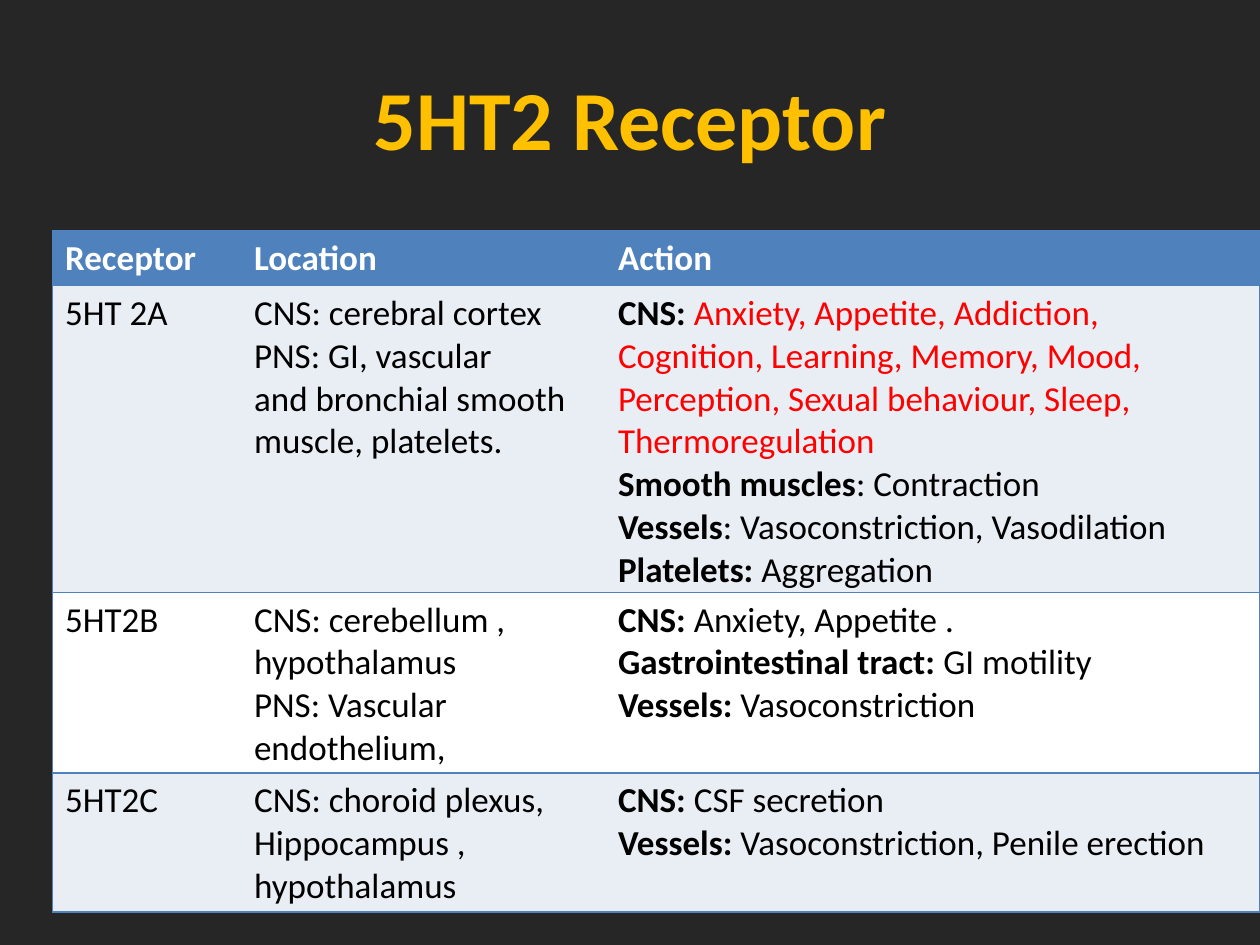
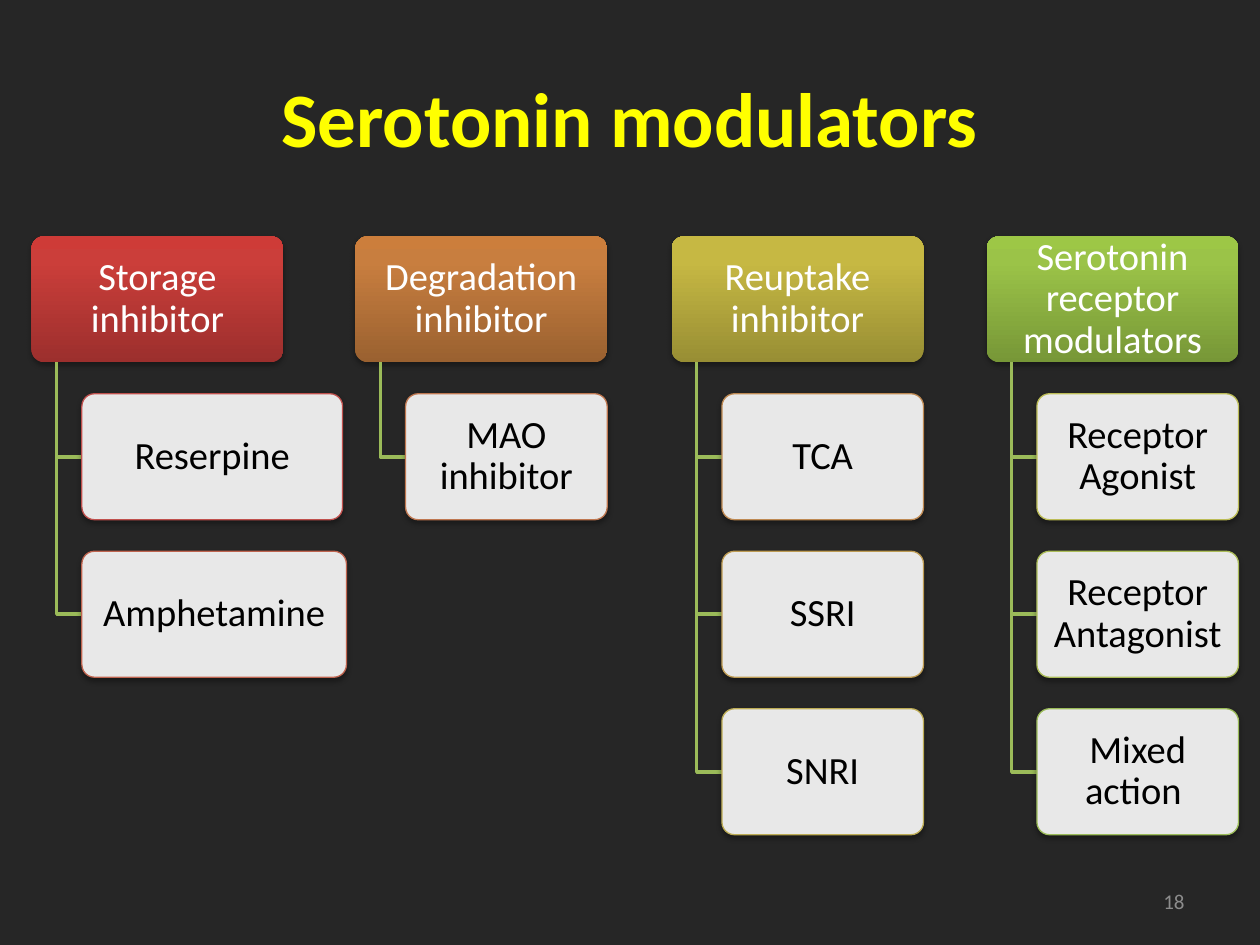
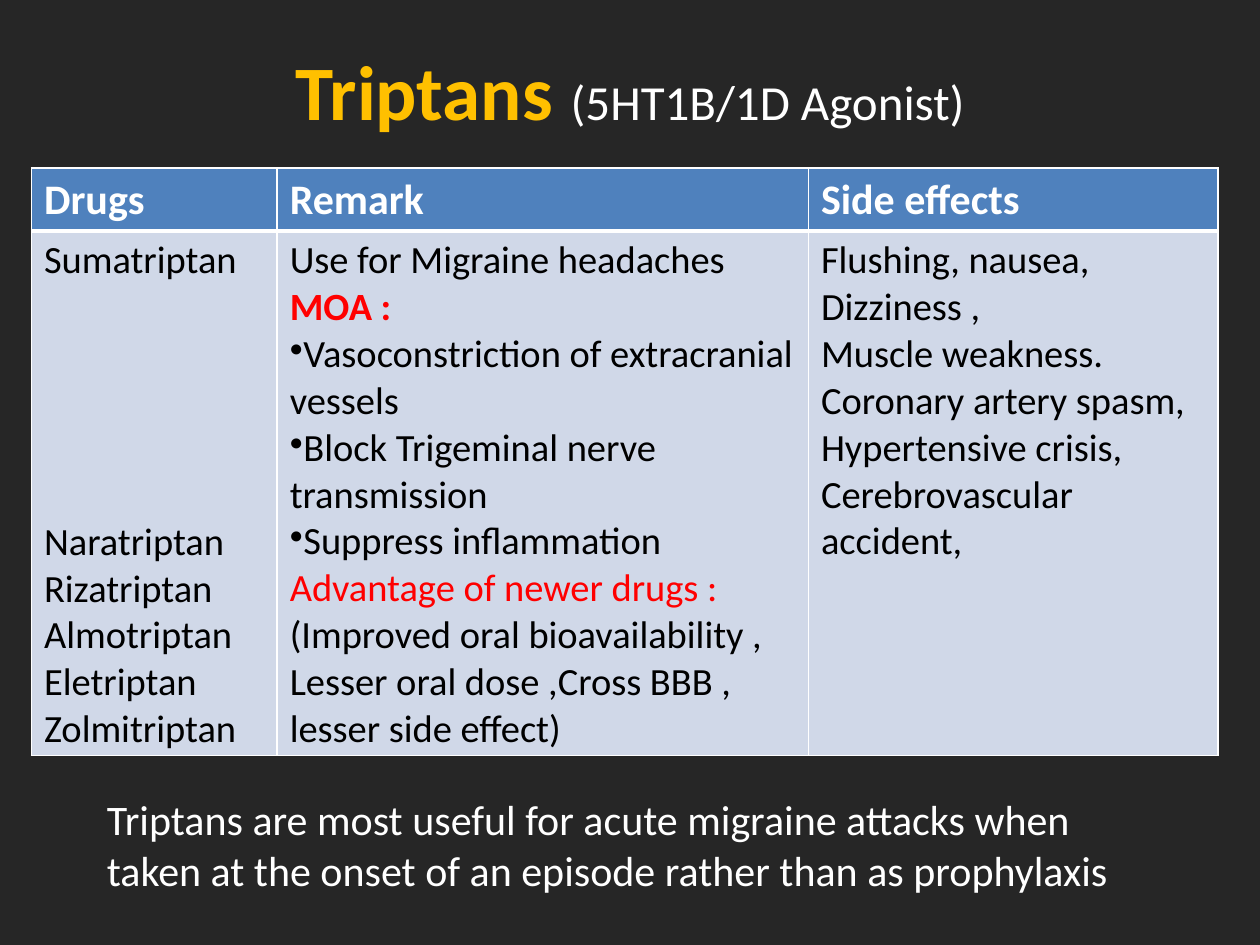
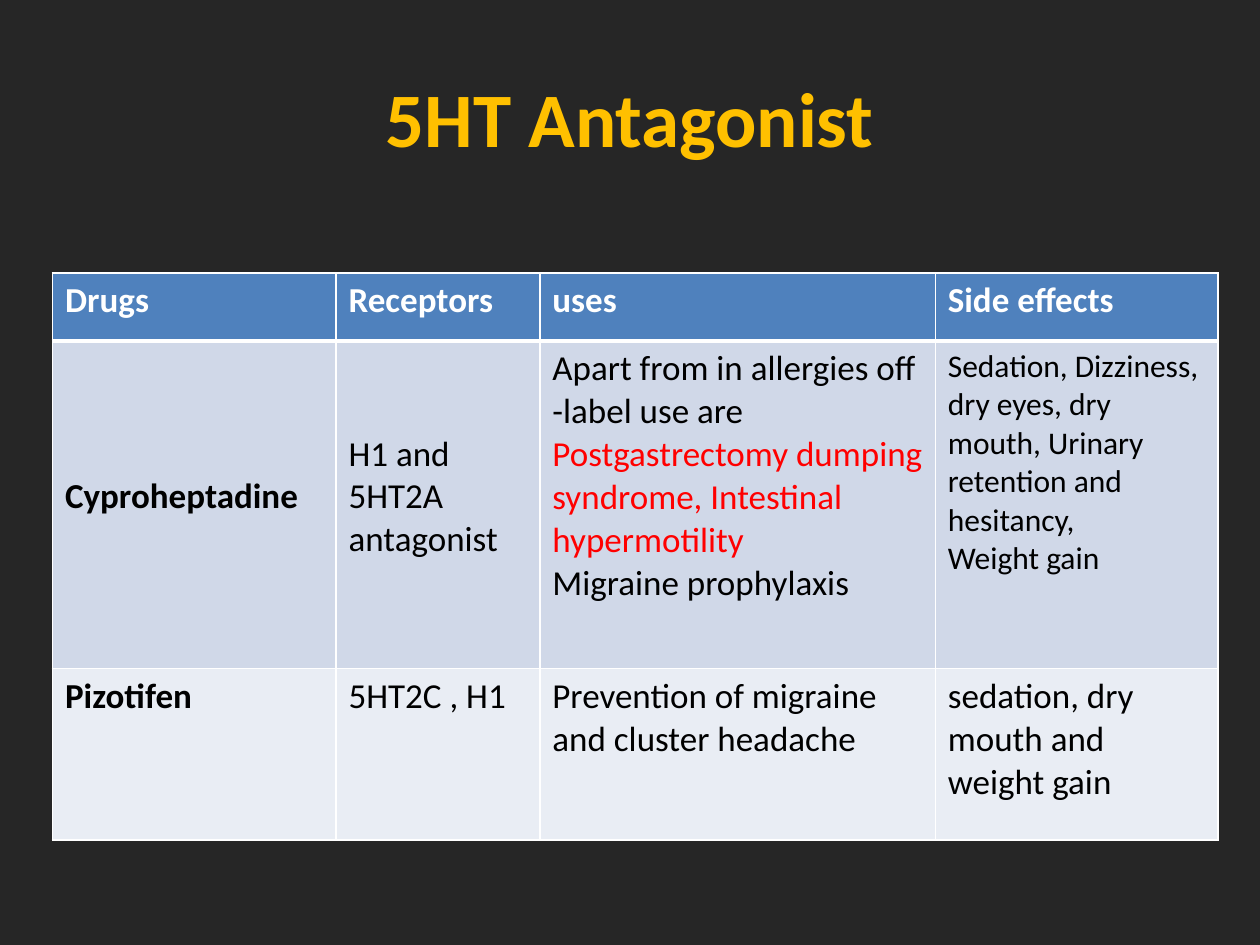
from dataclasses import dataclass
from typing import Optional

from lxml.etree import SubElement
from pptx import Presentation
from pptx.dml.color import RGBColor
from pptx.enum.shapes import MSO_SHAPE as Preset
from pptx.enum.text import MSO_ANCHOR as Anchor, PP_ALIGN as Align
from pptx.oxml.ns import qn
from pptx.util import Pt


@dataclass(frozen=True)
class Theme:
    font: str = "Calibri"
    background: str = "262626"
    gold: str = "FFC000"
    yellow: str = "FFFF00"
    white: str = "FFFFFF"
    black: str = "000000"
    red: str = "FF0000"
    grey: str = "8C8C8C"
    blue: str = "4F81BD"
    band: str = "D0D8E8"
    pale: str = "E9EDF4"
    branch: str = "9BBB59"
    title: float = 44
    large_title: float = 48
    subtitle: float = 28
    note: float = 24
    node: float = 22
    cell: float = 20
    small: float = 18
    number: float = 12


THEME = Theme()


@dataclass(frozen=True)
class Span:
    text: str
    color: str = THEME.black
    bold: bool = False
    size: Optional[float] = None


@dataclass(frozen=True)
class Line:
    spans: tuple[Span, ...]
    bullet: bool = False
    before: float = 0


@dataclass(frozen=True)
class Cell:
    lines: tuple[Line, ...]
    top: float = 3.6


@dataclass(frozen=True)
class Area:
    left: float
    top: float
    width: float
    height: float

    def lengths(self) -> tuple:
        return Pt(self.left), Pt(self.top), Pt(self.width), Pt(self.height)


@dataclass(frozen=True)
class Grid:
    """A table; body rows grow to fit their text, up to the area's height."""
    area: Area
    columns: tuple[float, ...]
    rows: tuple[float, ...]
    headings: tuple[str, ...]
    body: tuple[tuple[Cell, ...], ...]
    fills: tuple[str, ...]
    rule: str = THEME.white
    inner_verticals: bool = True
    header_rule: float = 3
    heading_size: float = THEME.cell
    size: float = THEME.cell


@dataclass(frozen=True)
class Leaf:
    text: str
    border: str
    width: float = 115.2


@dataclass(frozen=True)
class Branch:
    left: float
    heading: str
    shades: tuple[str, str, str]
    leaves: tuple[Leaf, ...]


def line(text: str, color: str = THEME.black, bold: bool = False, size: Optional[float] = None,
         bullet: bool = False, before: float = 0) -> Line:
    return Line((Span(text, color, bold, size),), bullet, before)


def labelled(label: str, text: str, color: str = THEME.black) -> Line:
    return Line((Span(label, bold=True), Span(text, color)))


def plain(*texts: str, size: Optional[float] = None, bold: bool = False, top: float = 3.6) -> Cell:
    return Cell(tuple(line(text, bold=bold, size=size) for text in texts), top)


def rgb(color: str) -> RGBColor:
    return RGBColor.from_string(color)


def write(frame, lines: tuple[Line, ...], size: float, align: Align = Align.LEFT,
          spacing: Optional[float] = None) -> None:
    frame.word_wrap = True
    for index, entry in enumerate(lines):
        para = frame.add_paragraph() if index else frame.paragraphs[0]
        para.alignment = align
        if spacing:
            para.line_spacing = spacing
        if entry.before:
            para.space_before = Pt(entry.before)
        if entry.bullet:
            SubElement(para._p.get_or_add_pPr(), qn("a:buChar"), char="•")
        for span in entry.spans:
            run = para.add_run()
            run.text = span.text
            run.font.name = THEME.font
            run.font.size = Pt(span.size or size)
            run.font.bold = span.bold
            run.font.color.rgb = rgb(span.color)


def add_text(page, area: Area, lines: tuple[Line, ...], size: float,
             align: Align = Align.LEFT, anchor: Anchor = Anchor.MIDDLE) -> None:
    box = page.shapes.add_textbox(*area.lengths())
    box.text_frame.vertical_anchor = anchor
    write(box.text_frame, lines, size, align)


def add_page(deck, *title: Span, top: float = 21.6):
    page = deck.slides.add_slide(deck.slide_layouts[6])
    page.background.fill.solid()
    page.background.fill.fore_color.rgb = rgb(THEME.background)
    add_text(page, Area(36, top, 648, 90), (Line(title),), THEME.title, Align.CENTER)
    return page


def set_borders(cell, color: str, widths: dict[str, float]) -> None:
    """Draw the cell's edges (L, R, T, B); a width of zero hides the edge."""
    properties = cell._tc.get_or_add_tcPr()
    for index, side in enumerate("LRTB"):
        edge = SubElement(properties, qn(f"a:ln{side}"), w=str(Pt(widths[side])))
        if widths[side]:
            SubElement(SubElement(edge, qn("a:solidFill")), qn("a:srgbClr"), val=color)
        else:
            SubElement(edge, qn("a:noFill"))
        properties.insert(index, edge)


def add_grid(page, grid: Grid) -> None:
    headings = tuple(Cell((line(text, THEME.white, True, grid.heading_size),))
                     for text in grid.headings)
    content = (headings, *grid.body)
    fills = (THEME.blue, *grid.fills)
    frame = page.shapes.add_table(len(content), len(grid.columns), *grid.area.lengths())
    table = frame.table
    table.horz_banding = False
    for column, width in zip(table.columns, grid.columns):
        column.width = Pt(width)
    for row, height in zip(table.rows, grid.rows):
        row.height = Pt(height)
    frame.height = Pt(grid.area.height)
    last = len(grid.columns) - 1
    for r, entries in enumerate(content):
        for c, entry in enumerate(entries):
            cell = table.cell(r, c)
            cell.margin_top = Pt(entry.top)
            cell.fill.solid()
            cell.fill.fore_color.rgb = rgb(fills[r])
            set_borders(cell, grid.rule, {
                "L": 1 if c == 0 or grid.inner_verticals else 0,
                "R": 1 if c == last or grid.inner_verticals else 0,
                "T": grid.header_rule if r == 1 else 1,
                "B": grid.header_rule if r == 0 else 1,
            })
            write(cell.text_frame, entry.lines, grid.size)


def add_node(page, area: Area, text: str, color: str):
    """Add a rounded box with a soft shadow; the caller sets fill and line."""
    node = page.shapes.add_shape(Preset.ROUNDED_RECTANGLE, *area.lengths())
    node.adjustments[0] = 0.1
    node.shadow.inherit = False
    effects = node.element.spPr.find(qn("a:effectLst"))
    shadow = SubElement(effects, qn("a:outerShdw"), blurRad=str(Pt(3.1)), dist=str(Pt(1.8)),
                        dir="5400000", rotWithShape="0")
    shade = SubElement(shadow, qn("a:srgbClr"), val=THEME.black)
    SubElement(shade, qn("a:alpha"), val="35000")
    frame = node.text_frame
    frame.margin_left = frame.margin_right = Pt(5.76)
    frame.margin_top = frame.margin_bottom = Pt(4.32)
    frame.vertical_anchor = Anchor.MIDDLE
    write(frame, (line(text, color),), THEME.node, Align.CENTER, 0.9)
    return node


def add_heading(page, area: Area, branch: Branch) -> None:
    node = add_node(page, area, branch.heading, THEME.white)
    node.line.fill.background()
    node.fill.gradient()
    node.fill.gradient_angle = 90
    stops = node.element.spPr.find(f"{qn('a:gradFill')}/{qn('a:gsLst')}")
    stops.clear()
    for position, color in zip((0, 80, 100), branch.shades):
        stop = SubElement(stops, qn("a:gs"), pos=str(position * 1000))
        SubElement(stop, qn("a:srgbClr"), val=color)


def add_leaf(page, area: Area, leaf: Leaf) -> None:
    node = add_node(page, area, leaf.text, THEME.black)
    node.fill.solid()
    node.fill.fore_color.rgb = rgb(THEME.white)
    fill = node.element.spPr.find(qn("a:solidFill"))
    SubElement(fill[0], qn("a:alpha"), val="90000")
    node.line.color.rgb = rgb(leaf.border)
    node.line.width = Pt(0.75)


def add_elbow(page, left: float, top: float, right: float, bottom: float) -> None:
    builder = page.shapes.build_freeform(Pt(left), Pt(top))
    builder.add_line_segments([(Pt(left), Pt(bottom)), (Pt(right), Pt(bottom))], close=False)
    elbow = builder.convert_to_shape()
    elbow.fill.background()
    elbow.line.color.rgb = rgb(THEME.branch)
    elbow.line.width = Pt(2)
    elbow.shadow.inherit = False


def add_branch(page, branch: Branch) -> None:
    top, width, height, step, indent = 135, 144, 72, 90, 14.4
    add_heading(page, Area(branch.left, top, width, height), branch)
    trunk, leaf_left = branch.left + indent, branch.left + 2 * indent
    for index, leaf in enumerate(branch.leaves, start=1):
        leaf_top = top + index * step
        add_elbow(page, trunk, top + height, leaf_left, leaf_top + height / 2)
        add_leaf(page, Area(leaf_left, leaf_top, leaf.width, height), leaf)


RECEPTORS = Grid(
    Area(30, 132, 690, 388.8), (108, 208, 374), (29.2,) * 4,
    ("Receptor", "Location", "Action"),
    (
        (
            plain("5HT 2A"),
            plain("CNS: cerebral cortex", "PNS: GI, vascular", "and bronchial smooth",
                  "muscle, platelets."),
            Cell((
                labelled("CNS: ", "Anxiety, Appetite, Addiction, Cognition, Learning, Memory, "
                         "Mood, Perception, Sexual behaviour, Sleep, Thermoregulation",
                         THEME.red),
                labelled("Smooth muscles", ": Contraction"),
                labelled("Vessels", ": Vasoconstriction, Vasodilation"),
                labelled("Platelets: ", "Aggregation"),
            )),
        ),
        (
            plain("5HT2B"),
            plain("CNS: cerebellum ,", "hypothalamus", "PNS: Vascular endothelium,"),
            Cell((
                labelled("CNS: ", "Anxiety, Appetite ."),
                labelled("Gastrointestinal tract: ", "GI motility"),
                labelled("Vessels: ", "Vasoconstriction"),
            )),
        ),
        (
            plain("5HT2C"),
            plain("CNS: choroid plexus,", "Hippocampus , hypothalamus"),
            Cell((
                labelled("CNS: ", "CSF secretion"),
                labelled("Vessels: ", "Vasoconstriction, Penile erection"),
            )),
        ),
    ),
    (THEME.pale, THEME.white, THEME.pale),
    rule=THEME.blue, inner_verticals=False, header_rule=1,
)

MODULATORS = (
    Branch(18, "Storage inhibitor", ("9C2F2D", "CB3E3A", "CE3B37"), (
        Leaf("Reserpine", "C0504D", 149), Leaf("Amphetamine", "BF644F", 151.2))),
    Branch(203, "Degradation inhibitor", ("9A6130", "C87E3F", "CC7E3C"), (
        Leaf("MAO inhibitor", "BF7750"),)),
    Branch(383.75, "Reuptake inhibitor", ("988E34", "C6B843", "C9BB41"), (
        Leaf("TCA", "BE8952"), Leaf("SSRI", "BD9B53"), Leaf("SNRI", "BDAC55"))),
    Branch(563.75, "Serotonin receptor modulators", ("779737", "9BC348", "9DC746"), (
        Leaf("Receptor Agonist", "BCBC56"), Leaf("Receptor Antagonist", "ABBC58"),
        Leaf("Mixed action ", "9BBB59"))),
)

TRIPTANS = Grid(
    Area(18, 96, 678, 333.4), (140.4, 303.6, 234), (29.2,) * 2,
    ("Drugs", "Remark", "Side effects"),
    ((
        Cell((
            line("Sumatriptan"),
            line("Naratriptan", before=134),
            *map(line, ("Rizatriptan", "Almotriptan", "Eletriptan", "Zolmitriptan")),
        )),
        Cell((
            line("Use for Migraine headaches"),
            line("MOA :", THEME.red, True),
            line("Vasoconstriction of extracranial vessels", bullet=True),
            line("Block Trigeminal nerve transmission", bullet=True),
            line("Suppress inflammation", bullet=True),
            line("Advantage of newer drugs :", THEME.red),
            line("(Improved oral bioavailability ,"),
            line("Lesser oral dose ,Cross BBB , lesser side effect)"),
        )),
        plain("Flushing, nausea, Dizziness ,", "Muscle weakness.", "Coronary artery spasm,",
              "Hypertensive crisis, Cerebrovascular accident,"),
    ),),
    (THEME.band,), heading_size=THEME.note, size=THEME.node,
)

ANTAGONISTS = Grid(
    Area(30, 156, 666, 324), (162, 116.5, 226, 161.5), (38.9, 187.2, 97.9),
    ("Drugs", "Receptors", "uses", "Side effects"),
    (
        (
            plain("Cyproheptadine", bold=True, top=76.8),
            plain("H1 and 5HT2A antagonist", top=52.4),
            Cell((
                Line((
                    Span("Apart from in allergies off -label use are "),
                    Span("Postgastrectomy dumping syndrome, Intestinal hypermotility",
                         THEME.red),
                )),
                line("Migraine prophylaxis"),
            )),
            plain("Sedation, Dizziness, dry eyes, dry mouth, Urinary retention and hesitancy,",
                  "Weight gain", size=THEME.small),
        ),
        (
            plain("Pizotifen", bold=True),
            plain("5HT2C , H1"),
            plain("Prevention of migraine and cluster headache"),
            plain("sedation, dry mouth and weight gain"),
        ),
    ),
    (THEME.band, THEME.pale),
)


def main() -> None:
    deck = Presentation()
    deck.slide_width, deck.slide_height = Pt(720), Pt(540)

    page = add_page(deck, Span("5HT2 Receptor", THEME.gold, True, THEME.large_title))
    add_grid(page, RECEPTORS)

    page = add_page(deck, Span("Serotonin modulators", THEME.yellow, True))
    for branch in MODULATORS:
        add_branch(page, branch)
    add_text(page, Area(516, 500.5, 168, 28.75), (line("18", THEME.grey),),
             THEME.number, Align.RIGHT)

    page = add_page(deck, Span("Triptans ", THEME.gold, True),
                    Span("(5HT1B/1D Agonist)", THEME.white, size=THEME.subtitle), top=6)
    add_grid(page, TRIPTANS)
    add_text(page, Area(54, 450, 600, 65.5),
             (line("Triptans are most useful for acute migraine attacks when taken at the "
                   "onset of an episode rather than as prophylaxis", THEME.white),),
             THEME.note, anchor=Anchor.TOP)

    page = add_page(deck, Span("5HT Antagonist", THEME.gold, True))
    add_grid(page, ANTAGONISTS)

    deck.save("out.pptx")


if __name__ == "__main__":
    main()
